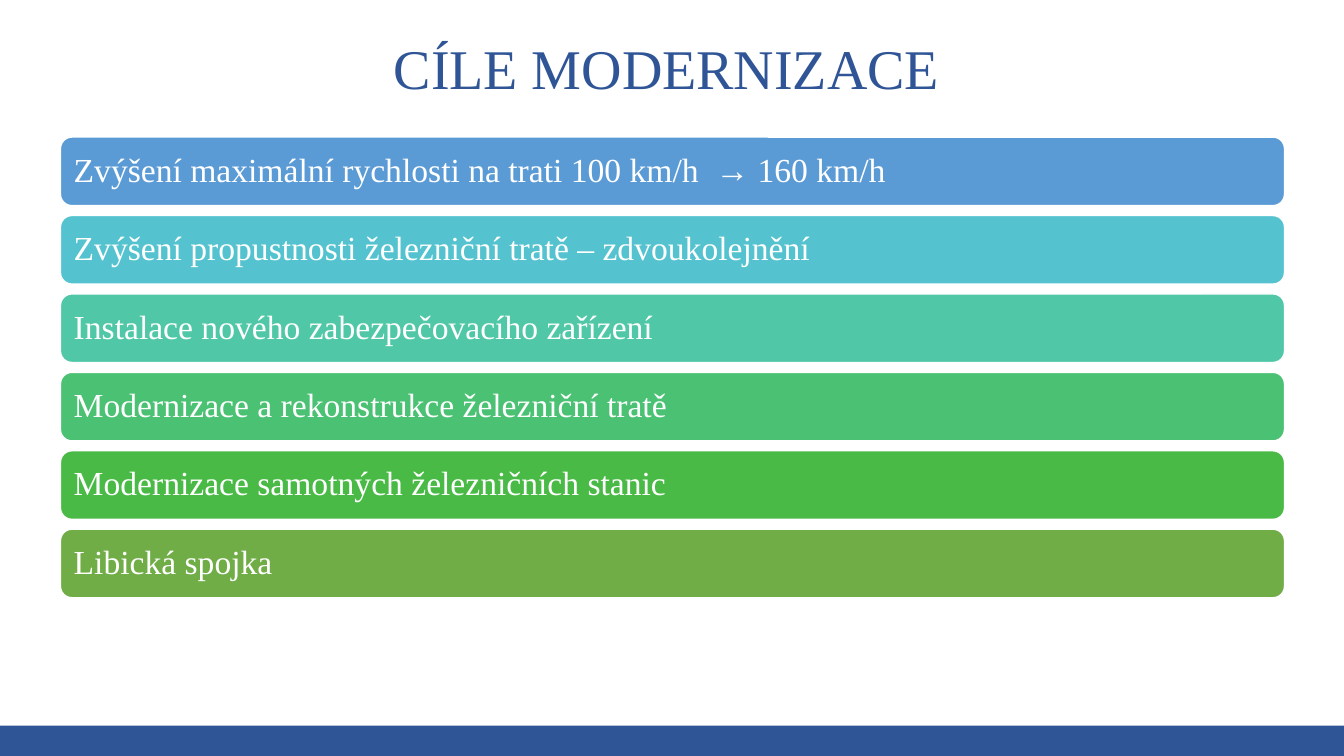
from pptx import Presentation
from pptx.dml.color import RGBColor
from pptx.enum.shapes import MSO_SHAPE
from pptx.enum.text import MSO_ANCHOR, MSO_AUTO_SIZE, PP_ALIGN
from pptx.util import Inches, Pt

FONT = "Times New Roman"
NAVY = RGBColor(0x2F, 0x55, 0x97)
WHITE = RGBColor(0xFF, 0xFF, 0xFF)
BLUE = RGBColor(0x5B, 0x9B, 0xD5)
TURQUOISE = RGBColor(0x55, 0xC3, 0xCF)
TEAL = RGBColor(0x50, 0xC8, 0xA7)
MINT = RGBColor(0x4B, 0xC1, 0x74)
GREEN = RGBColor(0x4A, 0xBA, 0x46)
OLIVE = RGBColor(0x70, 0xAD, 0x47)

GOALS = [
    ("Zvýšení maximální rychlosti na trati 100 km/h  → 160 km/h", BLUE),
    ("Zvýšení propustnosti železniční tratě – zdvoukolejnění", TURQUOISE),
    ("Instalace nového zabezpečovacího zařízení", TEAL),
    ("Modernizace a rekonstrukce železniční tratě", MINT),
    ("Modernizace samotných železničních stanic", GREEN),
    ("Libická spojka", OLIVE),
]
BAR_HEIGHT = 0.68


def write_line(shape, text, size, color, alignment):
    frame = shape.text_frame
    frame.text = text
    frame.word_wrap = True
    frame.auto_size = MSO_AUTO_SIZE.NONE
    frame.vertical_anchor = MSO_ANCHOR.MIDDLE
    para = frame.paragraphs[0]
    para.alignment = alignment
    para.line_spacing = 0.9
    font = para.runs[0].font
    font.name = FONT
    font.size = Pt(size)
    font.color.rgb = color


def add_block(page, kind, left, top, width, height, color):
    block = page.shapes.add_shape(
        kind, Inches(left), Inches(top), Inches(width), Inches(height))
    block.shadow.inherit = False
    block.fill.solid()
    block.fill.fore_color.rgb = color
    block.line.fill.background()
    return block


def add_footer_band(page, left, top, width, height):
    add_block(page, MSO_SHAPE.RECTANGLE, left, top, width, height, NAVY)


def add_title(page, left, top, width, height):
    title = page.shapes.title
    title.left, title.top = Inches(left), Inches(top)
    title.width, title.height = Inches(width), Inches(height)
    write_line(title, "CÍLE MODERNIZACE ", 40, NAVY, PP_ALIGN.CENTER)


def add_goals(page, left, top, width, height):
    # Bars are spread evenly from the top to the bottom of the region
    step = (height - BAR_HEIGHT) / (len(GOALS) - 1)
    for index, (text, color) in enumerate(GOALS):
        bar = add_block(page, MSO_SHAPE.ROUNDED_RECTANGLE, left,
                        top + index * step, width, BAR_HEIGHT, color)
        bar.line.color.rgb = WHITE
        bar.line.width = Pt(1)
        write_line(bar, text, 24, WHITE, PP_ALIGN.LEFT)


def main():
    deck = Presentation()
    deck.slide_width, deck.slide_height = Inches(13.33), Inches(7.5)
    page = deck.slides.add_slide(deck.slide_layouts[5])
    add_footer_band(page, 0, 7.2, 13.33, 0.3)
    add_title(page, 0.93, -0.02, 11.5, 1.45)
    add_goals(page, 0.6, 1.36, 12.14, 4.57)
    deck.save("out.pptx")


if __name__ == "__main__":
    main()
